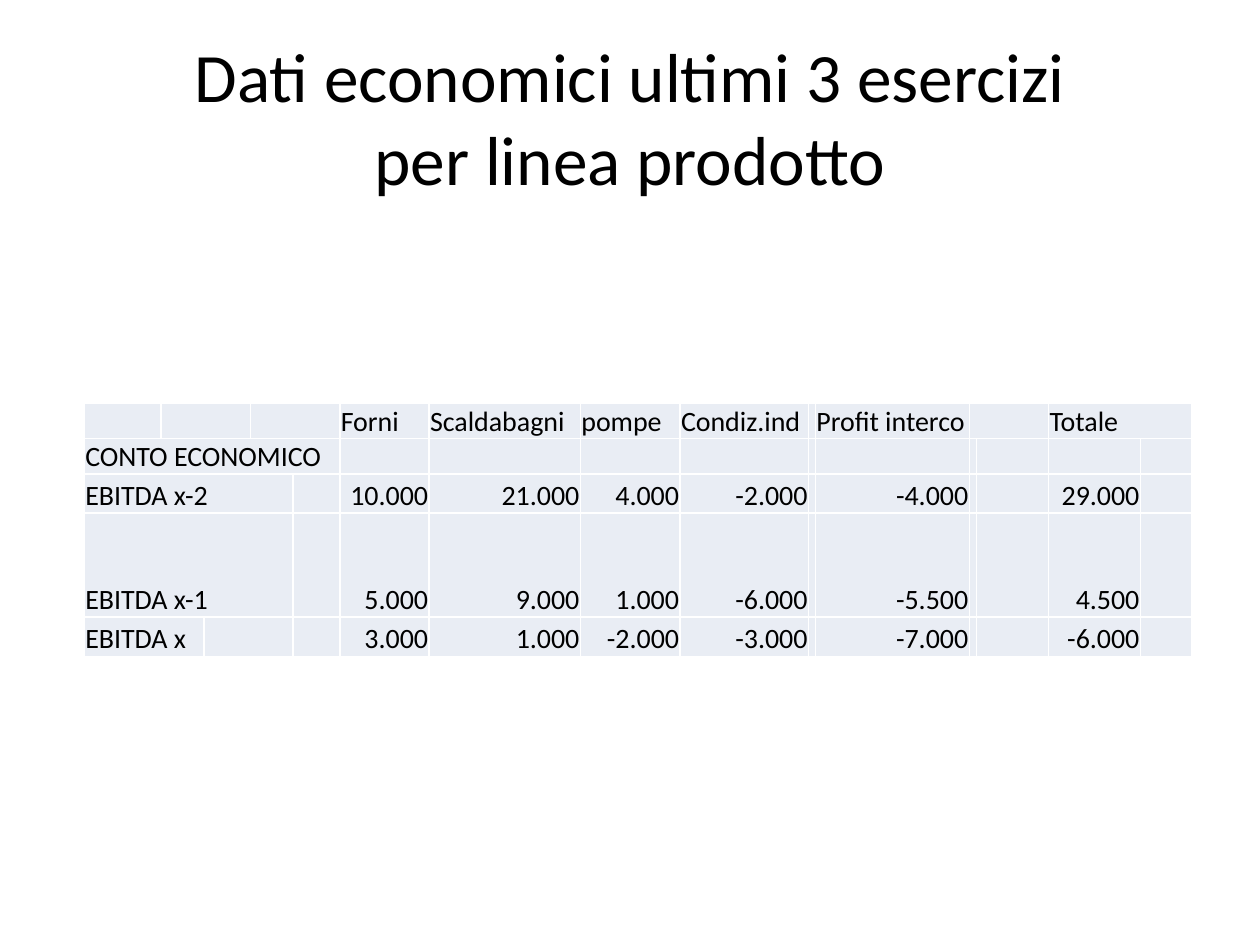
from typing import NamedTuple

from pptx import Presentation
from pptx.dml.color import RGBColor
from pptx.enum.text import MSO_ANCHOR, MSO_AUTO_SIZE, PP_ALIGN
from pptx.oxml.ns import qn
from pptx.util import Cm, Pt
from lxml.etree import SubElement

COLORS = {"text": "000000", "cell": "E9EDF4", "border": "FFFFFF"}
FONT = "Calibri"
TITLE = ["Dati economici ultimi 3 esercizi", "per linea prodotto"]
COL_WIDTHS = [1.55, 0.86, 0.94, 0.86, 0.94, 1.8, 3.05, 2.01, 2.59,
              0.1, 3.1, 0.15, 1.45, 1.85, 1.04]
VALUE_COLS = [5, 6, 7, 8, 10, 13]  # columns between the narrow spacers


class Row(NamedTuple):
    height: float
    label: str
    values: list[str]
    merges: list[tuple[int, int]]  # first and last column
    align: PP_ALIGN = PP_ALIGN.RIGHT


ROWS = [
    Row(0.69, "", ["Forni", "Scaldabagni", "pompe", "Condiz.ind", "Profit interco", "Totale"],
        [(1, 2), (3, 4), (11, 12), (13, 14)], PP_ALIGN.LEFT),
    Row(0.71, "CONTO ECONOMICO", [], [(0, 4)]),
    Row(0.79, "EBITDA x-2", ["10.000", "21.000", "4.000", "-2.000", "-4.000", "29.000"], [(0, 3)]),
    Row(2.1, "EBITDA x-1", ["5.000", "9.000", "1.000", "-6.000", "-5.500", "4.500"], [(0, 3)]),
    Row(0.79, "EBITDA x", ["3.000", "1.000", "-2.000", "-3.000", "-7.000", "-6.000"],
        [(0, 1), (2, 3)]),
]


def rgb(name: str) -> RGBColor:
    return RGBColor.from_string(COLORS[name])


def add_run(p, text: str, size: float) -> None:
    r = p.add_run()
    r.text = text
    r.font.name, r.font.size = FONT, Pt(size)
    r.font.color.rgb = rgb("text")


def add_title(s) -> None:
    sp = s.shapes.title
    sp.left, sp.top, sp.width, sp.height = Cm(1.27), Cm(0.76), Cm(22.86), Cm(3.18)
    tf = sp.text_frame
    tf.auto_size = MSO_AUTO_SIZE.NONE
    tf.vertical_anchor = MSO_ANCHOR.MIDDLE
    p = tf.paragraphs[0]
    p.alignment = PP_ALIGN.CENTER
    for i, line in enumerate(TITLE):
        if i:
            p.add_line_break()
        add_run(p, line, 39.6)


def format_cell(cell) -> None:
    cell.margin_left = cell.margin_right = cell.margin_top = Cm(0.02)
    cell.margin_bottom = 0
    cell.vertical_anchor = MSO_ANCHOR.BOTTOM
    # Borders come before the fill in the cell properties
    tc_pr = cell._tc.get_or_add_tcPr()
    for side in ("L", "R", "T", "B"):
        ln = SubElement(tc_pr, qn(f"a:ln{side}"), w=str(Pt(1)))
        fill = SubElement(ln, qn("a:solidFill"))
        SubElement(fill, qn("a:srgbClr"), val=COLORS["border"])
    cell.fill.solid()
    cell.fill.fore_color.rgb = rgb("cell")


def fill_row(tbl, i: int, row: Row) -> None:
    tbl.rows[i].height = Cm(row.height)
    texts = {0: row.label, **dict(zip(VALUE_COLS, row.values))}
    for c in range(len(COL_WIDTHS)):
        cell = tbl.cell(i, c)
        format_cell(cell)
        p = cell.text_frame.paragraphs[0]
        if texts.get(c):
            p.alignment = row.align if c else PP_ALIGN.LEFT
            add_run(p, texts[c], 16)
        else:
            # Keep empty cells from stretching the row
            SubElement(p._p, qn("a:endParaRPr"), sz="1200")
    for first, last in row.merges:
        tbl.cell(i, first).merge(tbl.cell(i, last))


def add_results_table(s) -> None:
    frame = s.shapes.add_table(len(ROWS), len(COL_WIDTHS), Cm(1.7), Cm(8.13),
                               Cm(sum(COL_WIDTHS)), Cm(sum(r.height for r in ROWS)))
    tbl = frame.table
    tbl.first_row = tbl.horz_banding = False
    for col, width in zip(tbl.columns, COL_WIDTHS):
        col.width = Cm(width)
    for i, row in enumerate(ROWS):
        fill_row(tbl, i, row)


def main() -> None:
    prs = Presentation()
    prs.slide_width, prs.slide_height = Cm(25.4), Cm(19.05)
    s = prs.slides.add_slide(prs.slide_layouts[5])
    add_title(s)
    add_results_table(s)
    prs.save("out.pptx")


if __name__ == "__main__":
    main()
